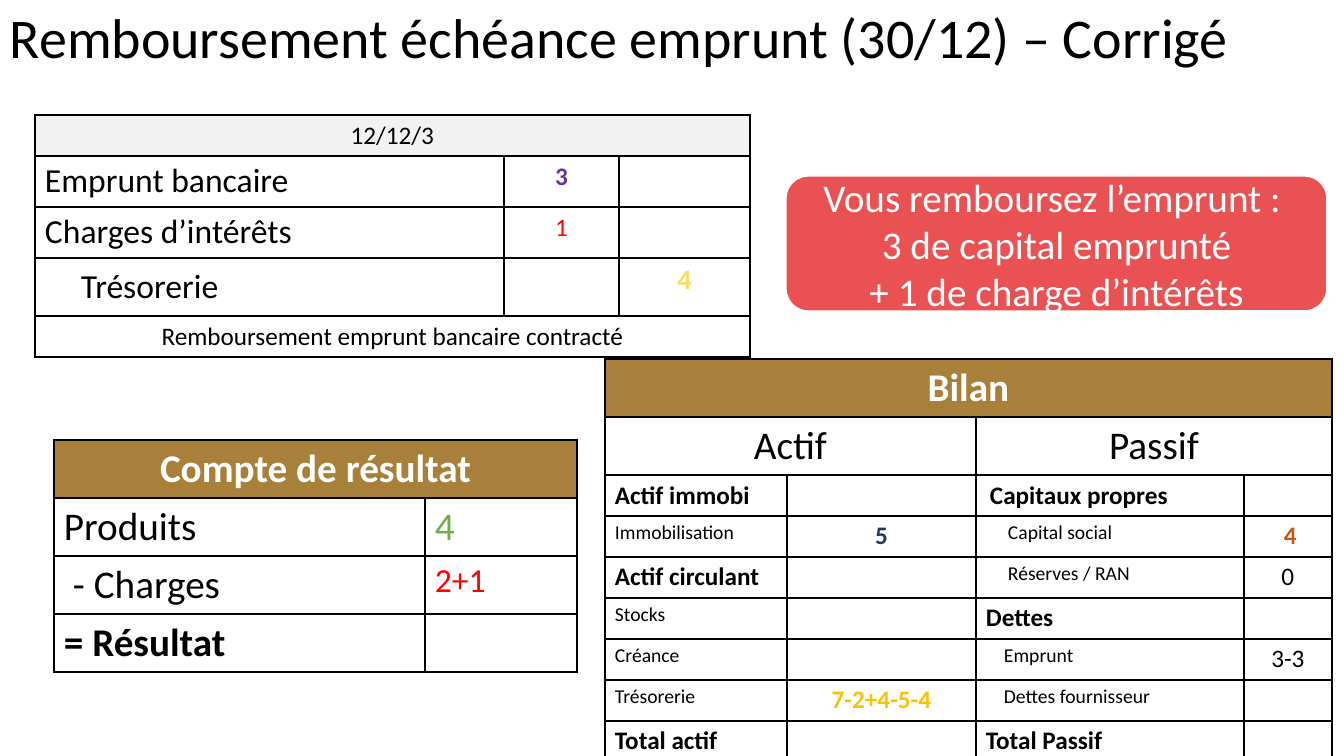
from dataclasses import dataclass

from lxml import etree
from pptx import Presentation
from pptx.dml.color import RGBColor
from pptx.enum.shapes import MSO_SHAPE
from pptx.enum.text import MSO_ANCHOR, PP_ALIGN
from pptx.oxml.ns import qn
from pptx.util import Emu, Pt

ROUNDED = MSO_SHAPE.ROUNDED_RECTANGLE
TOP, MIDDLE = MSO_ANCHOR.TOP, MSO_ANCHOR.MIDDLE
LEFT, CENTER = PP_ALIGN.LEFT, PP_ALIGN.CENTER

BLACK, WHITE, RED = "000000", "FFFFFF", "FF0000"
GOLD, LIGHT_GREY, CORAL = "A8803A", "F2F2F2", "EA5153"
CELL_MARGIN = 10


def px(length):
    return Emu(round(length * 914400 / 100.8))


def rgb(value):
    return RGBColor.from_string(value)


@dataclass
class Cell:
    text: str = ""
    size: int = 18
    color: str = BLACK
    bold: bool = False
    align: PP_ALIGN = LEFT
    indent: int = 0
    fill: str = ""
    anchor: MSO_ANCHOR = TOP


def centered(text, size=18, color=BLACK, **options):
    return Cell(text, size, color, align=CENTER, **options)


def heading(text):
    return centered(text, 28, WHITE, bold=True, fill=GOLD)


def strong(text, size=18, indent=0):
    return Cell(text, size, bold=True, indent=indent)


def detail(text, indent=0):
    return Cell(text, 14, indent=indent)


class SlideBuilder:
    font_name = "Calibri"

    def __init__(self, presentation):
        self.slide = presentation.slides.add_slide(presentation.slide_layouts[6])

    def set_text(self, paragraph, text, size, color, bold=False, align=LEFT):
        paragraph.text = text
        paragraph.alignment = align
        font = paragraph.font
        font.name, font.size, font.bold = self.font_name, Pt(size), bold
        font.color.rgb = rgb(color)

    def title(self, text, left, top, width, height):
        shape = self.slide.shapes.add_textbox(*map(px, (left, top, width, height)))
        frame = shape.text_frame
        frame.word_wrap = True
        frame.vertical_anchor = MIDDLE
        self.set_text(frame.paragraphs[0], text, 40, BLACK)
        frame.paragraphs[0].line_spacing = 0.9

    def callout(self, lines, left, top, width, height):
        shape = self.slide.shapes.add_shape(ROUNDED, *map(px, (left, top, width, height)))
        shape.shadow.inherit = False
        shape.fill.solid()
        shape.fill.fore_color.rgb = rgb(CORAL)
        shape.line.color.rgb = rgb(WHITE)
        shape.line.width = Pt(1)
        frame = shape.text_frame
        frame.word_wrap = True
        frame.vertical_anchor = MIDDLE
        for index, line in enumerate(lines):
            paragraph = frame.add_paragraph() if index else frame.paragraphs[0]
            self.set_text(paragraph, line, 28, WHITE, align=CENTER)

    def border(self, cell):
        properties = cell._tc.get_or_add_tcPr()
        for side in ("a:lnL", "a:lnR", "a:lnT", "a:lnB"):
            line = etree.SubElement(properties, qn(side), w=str(Pt(1)))
            fill = etree.SubElement(line, qn("a:solidFill"))
            etree.SubElement(fill, qn("a:srgbClr"), val=BLACK)

    def table(self, left, top, columns, heights, rows):
        """Draw a grid; a None entry extends the cell to its left."""
        frame = self.slide.shapes.add_table(
            len(rows), len(columns), px(left), px(top), px(sum(columns)), px(sum(heights)))
        table = frame.table
        table.first_row = table.horz_banding = False
        for column, width in zip(table.columns, columns):
            column.width = px(width)
        for row, height in zip(table.rows, heights):
            row.height = px(height)
        for row_index, row in enumerate(rows):
            for column_index, content in enumerate(row):
                cell = table.cell(row_index, column_index)
                self.border(cell)
                if content is None:
                    cell.fill.background()
                    continue
                self.fill_cell(cell, content)
                end = column_index + 1
                while end < len(row) and row[end] is None:
                    end += 1
                if end > column_index + 1:
                    cell.merge(table.cell(row_index, end - 1))

    def fill_cell(self, cell, content):
        if content.fill:
            cell.fill.solid()
            cell.fill.fore_color.rgb = rgb(content.fill)
        else:
            cell.fill.background()
        cell.margin_left = px(CELL_MARGIN + content.indent)
        cell.vertical_anchor = content.anchor
        self.set_text(cell.text_frame.paragraphs[0], content.text, content.size,
                      content.color, content.bold, content.align)


def main():
    presentation = Presentation()
    presentation.slide_width, presentation.slide_height = px(1344), px(756)
    builder = SlideBuilder(presentation)
    empty = Cell()

    builder.title("Remboursement échéance emprunt (30/12) – Corrigé", 0, -33, 1344, 146)

    # Journal entry
    builder.table(35, 115, [469, 115, 131], [41, 51, 51, 58, 41], [
        [centered("12/12/3", fill=LIGHT_GREY), None, None],
        [Cell("Emprunt bancaire", 24), centered("3", color="7030A0", bold=True), empty],
        [Cell("Charges d’intérêts", 24), centered("1", color=RED), empty],
        [Cell("Trésorerie", 24, indent=36, anchor=MIDDLE), empty,
         centered("4", 20, "FFD966", bold=True)],
        [centered("Remboursement emprunt bancaire contracté"), None, None],
    ])

    # Income statement
    builder.table(54, 440, [371, 152], [58] * 4, [
        [heading("Compte de résultat"), None],
        [Cell("Produits", 28), Cell("4", 28, "70AD47")],
        [Cell("- Charges", 28, indent=9), Cell("2+1", 24, RED)],
        [strong("= Résultat", 28), empty],
    ])

    # Balance sheet
    builder.table(605, 359, [182, 189, 268, 88], [58] * 2 + [41] * 7, [
        [heading("Bilan"), None, None, None],
        [centered("Actif", 28), None, centered("Passif", 28), None],
        [strong("Actif immobi"), empty, strong("Capitaux propres", indent=4), empty],
        [detail("Immobilisation"), centered("5", color="203864", bold=True),
         detail("Capital social", 22), centered("4", color="C55A11", bold=True, indent=5)],
        [strong("Actif circulant"), empty, detail("Réserves / RAN", 22), centered("0")],
        [detail("Stocks"), empty, strong("Dettes"), empty],
        [detail("Créance"), empty, detail("Emprunt", 18), centered("3-3")],
        [detail("Trésorerie"), centered("7-2+4-5-4", color="FFC000", bold=True),
         detail("Dettes fournisseur", 18), empty],
        [strong("Total actif"), empty, strong("Total Passif"), empty],
    ])

    # Explanation of the repayment
    builder.callout(["Vous remboursez l’emprunt : ", "3 de capital emprunté",
                     "+ 1 de charge d’intérêts"], 786, 176, 541, 135)

    presentation.save("out.pptx")


if __name__ == "__main__":
    main()
